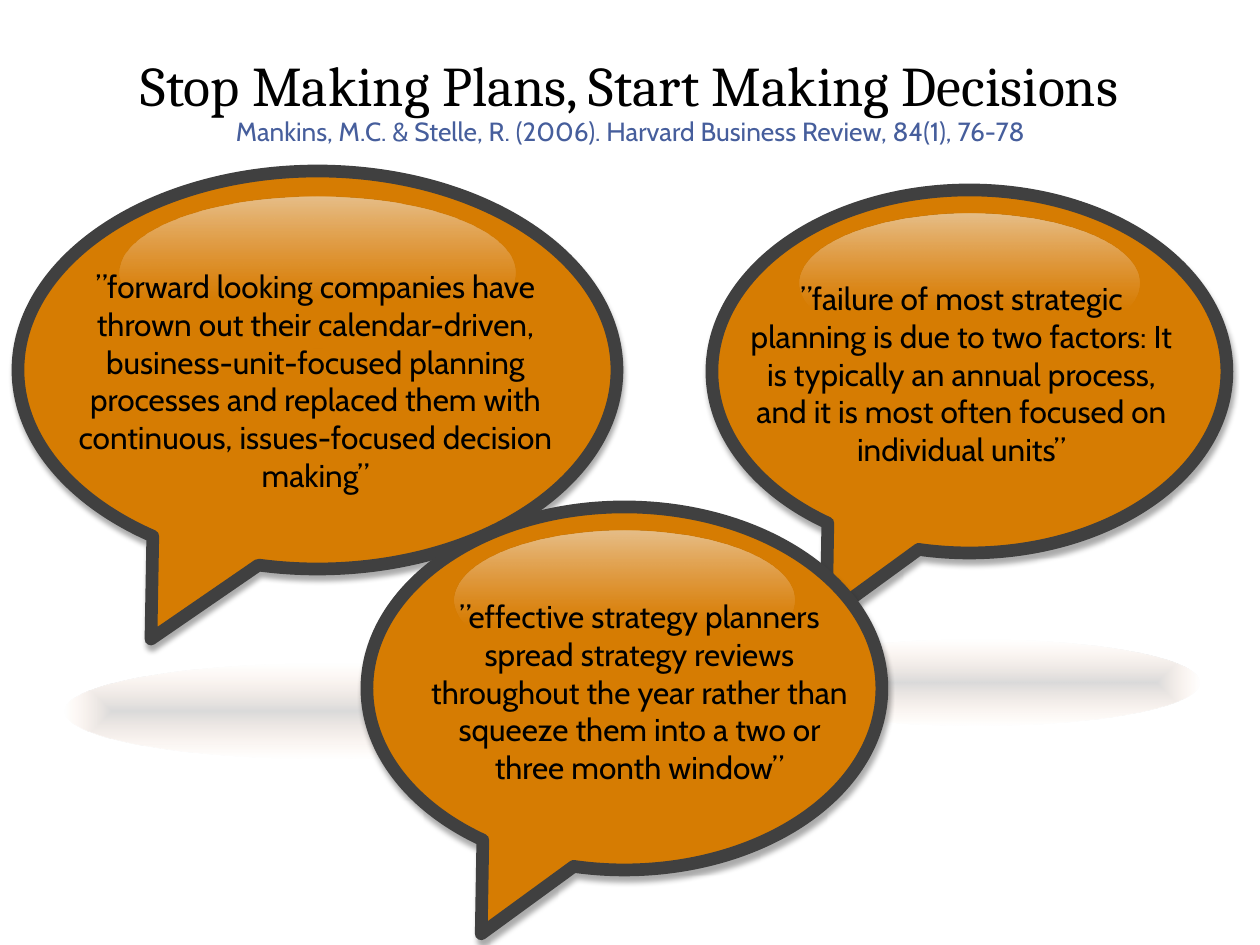
from dataclasses import dataclass

from pptx import Presentation
from pptx.dml.color import RGBColor
from pptx.enum.shapes import MSO_SHAPE
from pptx.enum.text import MSO_ANCHOR, PP_ALIGN
from pptx.oxml import parse_xml
from pptx.oxml.ns import nsdecls, qn
from pptx.util import Emu, Pt

CALLOUT = MSO_SHAPE.OVAL_CALLOUT
OVAL = MSO_SHAPE.OVAL
CENTER = PP_ALIGN.CENTER
TOP = MSO_ANCHOR.TOP
BOTTOM = MSO_ANCHOR.BOTTOM
EMU_PER_PX = 914400 / 126

GLOSS_PLACE = (0.17, 0.065, 0.66, 0.382)
FLOOR_PLACE = (0.078, 1.238, 0.868, 0.238)
TAIL = (-0.278, 0.676)


@dataclass(frozen=True)
class Theme:
    bubble: str = "D67C02"
    outline: str = "404040"
    shadow: str = "000000"
    gloss: str = "F2F2F2"
    floor: str = "BFBFBF"
    fade: str = "FFD6BD"
    ink: str = "000000"
    citation: str = "465E9C"
    heading_font: str = "Cambria"
    body_font: str = "Cabin"
    heading_size: int = 32
    citation_size: int = 15
    quote_size: int = 18
    outline_width: float = 7.25


def px(length):
    return Emu(round(length * EMU_PER_PX))


def within(frame, place):
    left, top, width, height = frame
    x, y, w, h = place
    return left + x * width, top + y * height, w * width, h * height


class Board:
    def __init__(self, slide, theme):
        self.slide = slide
        self.theme = theme

    def text(self, frame, words, size, font, color, anchor=TOP, spacing=None, inset=6):
        box = self.slide.shapes.add_textbox(*map(px, frame))
        body = box.text_frame
        body.word_wrap = True
        body.vertical_anchor = anchor
        body.margin_top = body.margin_bottom = px(inset)
        paragraph = body.paragraphs[0]
        paragraph.text = words
        paragraph.alignment = CENTER
        if spacing:
            paragraph.line_spacing = spacing
        paragraph.font.size = Pt(size)
        paragraph.font.name = font
        paragraph.font.color.rgb = RGBColor.from_string(color)

    def glow(self, frame, color, opacity, end, direction):
        oval = self.slide.shapes.add_shape(OVAL, *map(px, frame))
        oval.shadow.inherit = False
        oval.line.fill.background()
        oval.fill.background()
        gradient = parse_xml(
            f'<a:gradFill {nsdecls("a")} rotWithShape="1"><a:gsLst>'
            f'<a:gs pos="0"><a:srgbClr val="{color}">'
            f'<a:alpha val="{opacity * 1000}"/></a:srgbClr></a:gs>'
            f'<a:gs pos="{end * 1000}"><a:srgbClr val="{self.theme.fade}">'
            f'<a:alpha val="0"/></a:srgbClr></a:gs></a:gsLst>{direction}</a:gradFill>'
        )
        properties = oval._element.spPr
        properties.replace(properties.find(qn("a:noFill")), gradient)

    def callout(self, frame):
        theme = self.theme
        bubble = self.slide.shapes.add_shape(CALLOUT, *map(px, frame))
        for index, offset in enumerate(TAIL):
            bubble.adjustments[index] = offset
        bubble.fill.solid()
        bubble.fill.fore_color.rgb = RGBColor.from_string(theme.bubble)
        bubble.line.color.rgb = RGBColor.from_string(theme.outline)
        bubble.line.width = Pt(theme.outline_width)
        properties = bubble._element.spPr
        properties.find(qn("a:ln")).append(parse_xml(f'<a:round {nsdecls("a")}/>'))
        bubble.shadow.inherit = False
        properties.find(qn("a:effectLst")).append(parse_xml(
            f'<a:outerShdw {nsdecls("a")} blurRad="{Pt(3)}" dist="{Pt(3)}" '
            f'dir="{80 * 60000}" rotWithShape="0"><a:srgbClr val="{theme.shadow}">'
            f'<a:alpha val="32000"/></a:srgbClr></a:outerShdw>'
        ))

    def quote(self, frame, text_frame, words, has_floor):
        theme = self.theme
        self.callout(frame)
        self.glow(within(frame, GLOSS_PLACE), theme.gloss, 56, 68,
                  '<a:lin ang="5400000" scaled="0"/>')
        if has_floor:
            self.glow(within(frame, FLOOR_PLACE), theme.floor, 57, 100,
                      '<a:path path="shape"><a:fillToRect l="50000" t="50000" '
                      'r="50000" b="50000"/></a:path>')
        self.text(text_frame, words, theme.quote_size, theme.body_font, theme.ink)


QUOTES = [
    ((712, 190, 515, 363), (737, 273, 449, 204),
     "”failure of most strategic planning is due to two factors: It is typically "
     "an annual process, and it is most often focused on individual units”", True),
    ((18, 171, 599, 398), (59, 261, 513, 242),
     "”forward looking companies have thrown out their calendar-driven, "
     "business-unit-focused planning processes and replaced them with continuous, "
     "issues-focused decision making”", True),
    ((367, 507, 515, 363), (415, 591, 449, 204),
     "”effective strategy planners spread strategy reviews throughout the year "
     "rather than squeeze them into a two or three month window”", False),
]


def main():
    deck = Presentation()
    deck.slide_width, deck.slide_height = px(1260), px(945)
    theme = Theme()
    board = Board(deck.slides.add_slide(deck.slide_layouts[6]), theme)
    board.text((87, 55, 1086, 63), "Stop Making Plans, Start Making Decisions",
               theme.heading_size, theme.heading_font, theme.ink, BOTTOM, inset=0)
    board.text((87, 120, 1087, 34),
               "Mankins, M.C. & Stelle, R. (2006). Harvard Business Review, 84(1), 76-78",
               theme.citation_size, theme.body_font, theme.citation, spacing=0.6)
    for quote in QUOTES:
        board.quote(*quote)
    deck.save("out.pptx")


if __name__ == "__main__":
    main()
